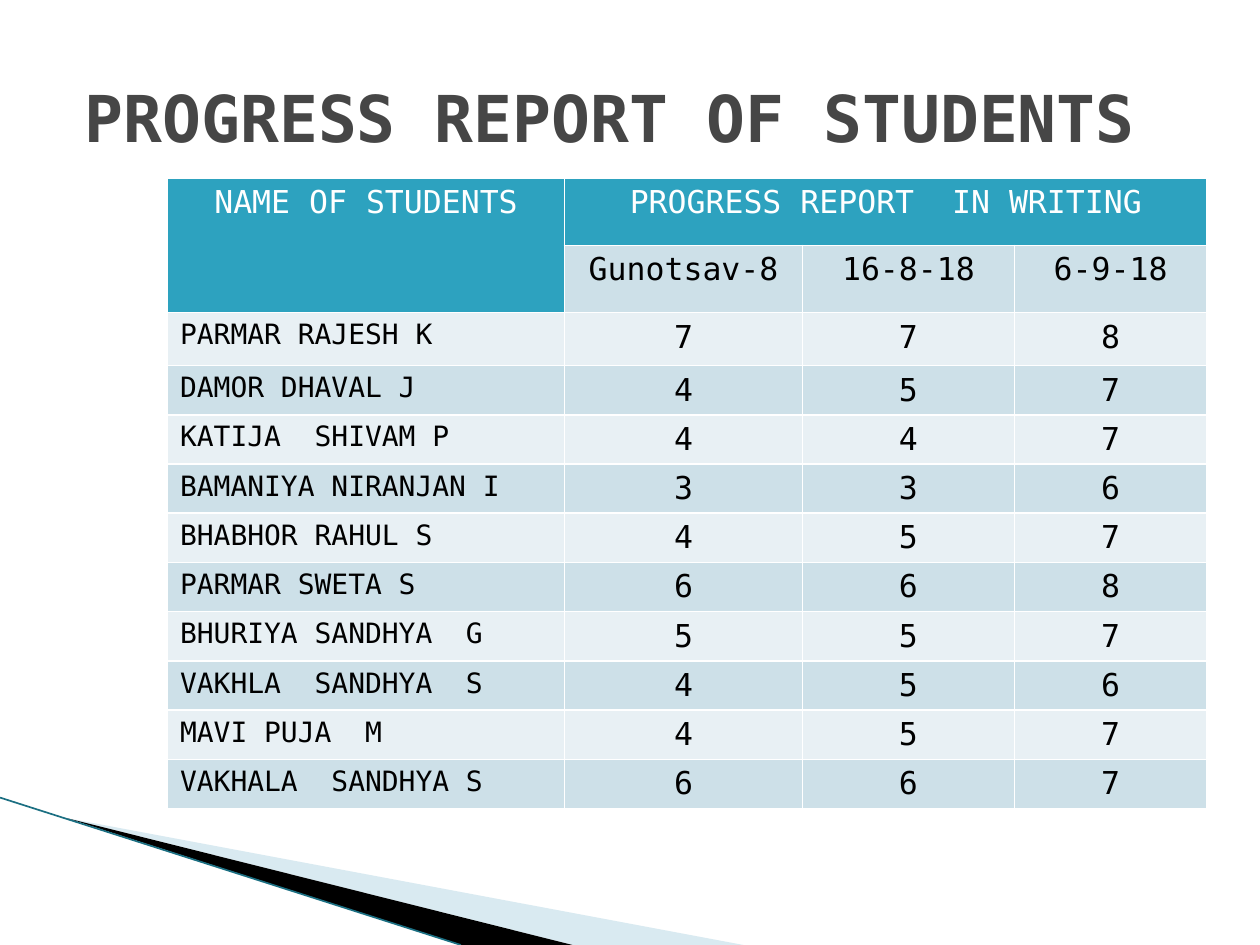
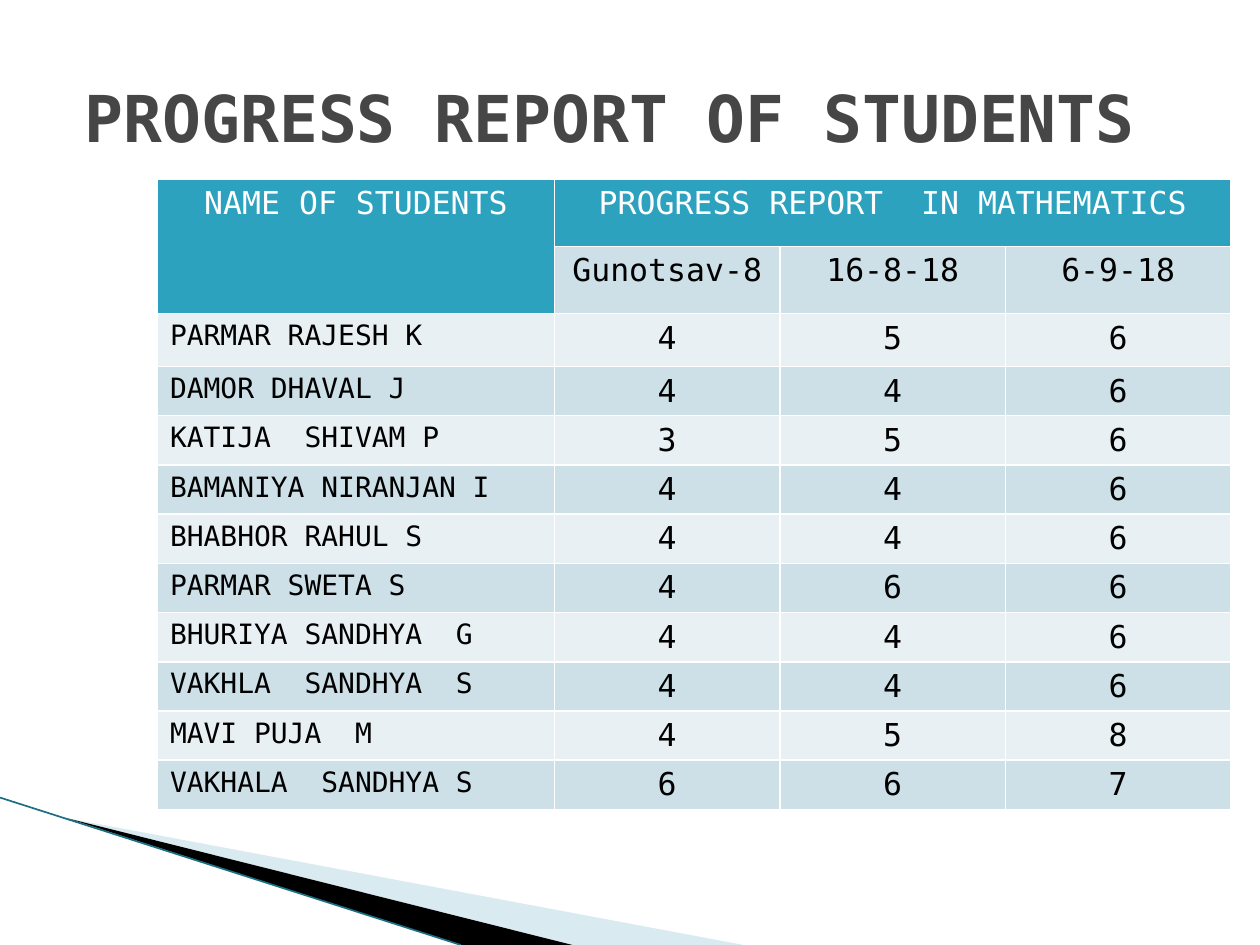
from dataclasses import dataclass
from lxml.etree import SubElement as sub
from pptx import Presentation
from pptx.dml.color import RGBColor as RGB
from pptx.enum.shapes import MSO_CONNECTOR as Link
from pptx.enum.text import MSO_ANCHOR as Anchor, MSO_AUTO_SIZE as Fit, PP_ALIGN as Align
from pptx.oxml.ns import qn
from pptx.util import Inches, Pt


@dataclass(frozen=True)
class Theme:
    font: str = "DejaVu Sans Mono"
    grey: str = "464646"
    head: str = "2DA2BF"
    dark: str = "CDE0E8"
    pale: str = "E8F0F4"
    mist: str = "A0CBDC"
    teal: str = "1B6F82"
    black: str = "000000"
    white: str = "FFFFFF"
    big: float = 36.9
    mid: float = 18
    small: float = 16
    rule: float = 1
    edge: float = 0.95


T = Theme()
WIDE, HIGH = 10, 7.5
COLS = 40
UNIT = WIDE / COLS  # the grid is 40 columns by 30 square rows

TITLE = "PROGRESS REPORT OF STUDENTS "
TITLE_BOX = (2, 1.2, 36, 5)
SWEEP_BOX = (0, 25.32, 23.6, 4.68)
WEDGES = (
    (T.mist, 40, ((0.09, 0.14), (1, 1), (0.77, 1))),
    (T.black, 100, ((0.09, 0.14), (0.77, 1), (0.62, 1))),
)
ROWS = [2.14, 2.14, 1.68] + [1.56] * 9
DATES = ("Gunotsav-8", "16-8-18", "6-9-18")
NAMES = (
    "PARMAR RAJESH K", "DAMOR DHAVAL J", "KATIJA  SHIVAM P",
    "BAMANIYA NIRANJAN I", "BHABHOR RAHUL S", "PARMAR SWETA S",
    "BHURIYA SANDHYA  G", "VAKHLA  SANDHYA  S", "MAVI PUJA  M",
    "VAKHALA  SANDHYA S",
)
# subject, table corner, column widths, marks of each student by date
REPORTS = (
    ("WRITING", (5.32, 5.65), (12.6, 7.56, 6.72, 6.12),
     ("778", "457", "447", "336", "457", "668", "557", "456", "457", "667")),
    ("MATHEMATICS", (5, 5.68), (12.6, 7.16, 7.16, 7.16),
     ("456", "446", "356", "446", "446", "466", "446", "446", "458", "667")),
)


def grid(n):
    return Inches(n * UNIT)


def assign(obj, form):
    for key, val in form.items():
        setattr(obj, key, val)


def write(frame, text, size, tint, align, bold=False):
    para = frame.paragraphs[0]
    para.alignment = align
    run = para.add_run()
    run.text = text
    assign(run.font, {"name": T.font, "size": Pt(size), "bold": bold})
    run.font.color.rgb = RGB.from_string(tint)


def paint(fill, tint):
    fill.solid()
    fill.fore_color.rgb = RGB.from_string(tint)


def add_sweep(slide, box):
    """Draw the two wedges and the line in the lower left corner."""
    left, top, wide, high = box

    def spot(x, y):
        return grid(left + x * wide), grid(top + y * high)

    for tint, alpha, marks in WEDGES:
        start, *rest = [spot(*mark) for mark in marks]
        path = slide.shapes.build_freeform(*start)
        path.add_line_segments(rest)
        wedge = path.convert_to_shape()
        wedge.shadow.inherit = False
        wedge.line.fill.background()
        paint(wedge.fill, tint)
        if alpha < 100:
            color = wedge.fill._xPr.find(".//" + qn("a:srgbClr"))
            sub(color, qn("a:alpha"), val=str(alpha * 1000))
    line = slide.shapes.add_connector(Link.STRAIGHT, *spot(0, 0), *spot(0.62, 1))
    line.line.color.rgb = RGB.from_string(T.teal)
    line.line.width = Pt(T.edge)
    sub(line._element.spPr, qn("a:effectLst"))


def add_title(slide, box):
    title = slide.shapes.title
    assign(title, dict(zip(("left", "top", "width", "height"), map(grid, box))))
    frame = title.text_frame
    assign(frame, {"word_wrap": True, "auto_size": Fit.NONE,
                   "vertical_anchor": Anchor.MIDDLE})
    write(frame, TITLE, T.big, T.grey, Align.CENTER, True)


def rule_cell(cell):
    """Give a cell white borders on all four sides."""
    props = cell._tc.get_or_add_tcPr()
    for side in "LRTB":
        line = sub(props, qn("a:ln" + side), w=str(Pt(T.rule)))
        fill = sub(line, qn("a:solidFill"))
        sub(fill, qn("a:srgbClr"), val=T.white)


def add_marks(slide, subject, box, cols, marks):
    cells = [["NAME OF STUDENTS", "PROGRESS REPORT  IN " + subject, "", ""],
             ["", *DATES]]
    cells += [[name, *row] for name, row in zip(NAMES, marks)]
    table = slide.shapes.add_table(len(ROWS), len(cols), *map(grid, box)).table
    assign(table, {"first_row": False, "horz_banding": False})
    for col, wide in zip(table.columns, cols):
        col.width = grid(wide)
    for row, high in zip(table.rows, ROWS):
        row.height = grid(high)
    for r, texts in enumerate(cells):
        for c, text in enumerate(texts):
            cell = table.cell(r, c)
            top = r == 0 or (r == 1 and c == 0)
            name = r > 1 and c == 0
            rule_cell(cell)
            paint(cell.fill, T.head if top else T.dark if r % 2 else T.pale)
            if text:
                write(cell.text_frame, text, T.small if name else T.mid,
                      T.white if top else T.black,
                      Align.LEFT if name else Align.CENTER)
    table.cell(0, 0).merge(table.cell(1, 0))
    table.cell(0, 1).merge(table.cell(0, len(cols) - 1))


def add_report(deck, subject, corner, cols, marks):
    slide = deck.slides.add_slide(deck.slide_layouts[5])
    add_sweep(slide, SWEEP_BOX)
    add_title(slide, TITLE_BOX)
    add_marks(slide, subject, (*corner, sum(cols), sum(ROWS)), cols, marks)


def main():
    deck = Presentation()
    assign(deck, {"slide_width": Inches(WIDE), "slide_height": Inches(HIGH)})
    for report in REPORTS:
        add_report(deck, *report)
    deck.save("out.pptx")


if __name__ == "__main__":
    main()
